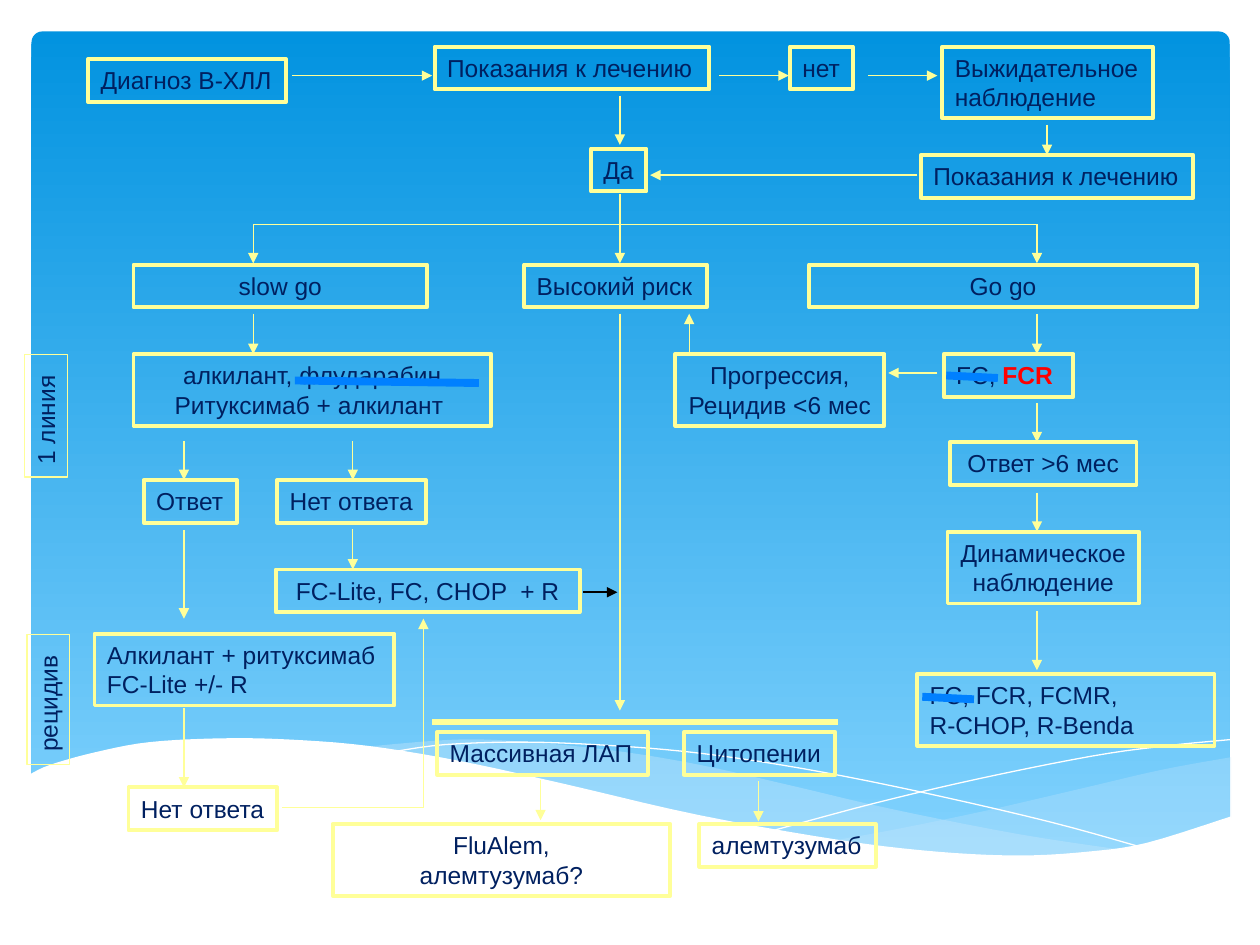
from lxml.etree import SubElement
from pptx import Presentation
from pptx.dml.color import RGBColor
from pptx.enum.shapes import MSO_CONNECTOR, MSO_SHAPE
from pptx.enum.text import MSO_AUTO_SIZE, PP_ALIGN
from pptx.oxml.ns import qn
from pptx.util import Inches, Pt

FONT, NAVY, YELLOW, WHITE = "Arial", "002060", "FFFF99", "FFFFFF"
RED, BLUE, BLACK, TINT = "FF0000", "0080FF", "000000", "C6E7FC"
LEFT, CENTER = PP_ALIGN.LEFT, PP_ALIGN.CENTER
BOX_H, LINE_H = 0.34, 0.23
BRANCH_Y = 1.78
SLOW_X, RISK_X, GO_X = 2.01, 4.92, 8.23
ANSWER_X, NO_ANSWER_X = 1.46, 2.8

# Each wave: opacity in percent, then smooth edges joined by straight sides
WAVES = [
    (TINT, 29, [
        [(9.77, 6.01), (9.22, 6.11), (8.62, 6.25), (7.8, 6.44), (7.07, 6.59), (6.62, 6.67)],
        [(6.62, 6.67), (7.19, 6.74), (7.7, 6.79), (8.25, 6.79), (8.73, 6.76), (9.22, 6.67),
         (9.51, 6.59), (9.77, 6.49)]]),
    (TINT, 40, [
        [(8.94, 6.75), (8.08, 6.62), (7.07, 6.42), (6.3, 6.24), (5.55, 6.07), (4.89, 5.96),
         (4.2, 5.89), (3.62, 5.87), (2.87, 5.93)],
        [(2.87, 5.93), (3.63, 6.04), (4.5, 6.24), (5.3, 6.42), (6.02, 6.57), (6.81, 6.7),
         (7.49, 6.78), (8.08, 6.8), (8.59, 6.79), (8.94, 6.75)]]),
    (WHITE, 100, [
        [(9.77, 6.48), (9.1, 6.69), (8.63, 6.76), (8.09, 6.79), (7.44, 6.76), (6.68, 6.67),
         (5.55, 6.47), (4.47, 6.22), (3.65, 6.04), (2.92, 5.92), (2.3, 5.87), (1.77, 5.86),
         (1.19, 5.89), (0.76, 5.97), (0.4, 6.07), (0.23, 6.15)],
        [(0.23, 7.31), (9.77, 7.31)]]),
]
HAIRLINES = [
    [(3.1, 5.97), (3.53, 5.91), (4.17, 5.89), (4.89, 5.92), (5.57, 5.98), (6.37, 6.1),
     (7.28, 6.28), (8.32, 6.52), (9.08, 6.73)],
    [(6.14, 6.59), (6.96, 6.37), (7.77, 6.18), (8.67, 6), (9.25, 5.92), (9.76, 5.87)],
]

# Lines of text, left, top, width, alignment, wrap
BOXES = [
    (["Диагноз В-ХЛЛ"], 0.7, 0.47, 1.57, LEFT, False),
    (["Показания к лечению"], 3.45, 0.37, 2.18, LEFT, True),
    (["нет"], 6.27, 0.37, 0.5, LEFT, False),
    (["Выжидательное", "наблюдение"], 7.48, 0.37, 1.67, LEFT, False),
    (["Да"], 4.69, 1.18, 0.44, LEFT, False),
    (["Показания к лечению"], 7.31, 1.23, 2.16, LEFT, False),
    (["slow go"], 1.06, 2.1, 2.33, CENTER, True),
    (["Высокий риск"], 4.16, 2.1, 1.45, LEFT, False),
    (["Go go"], 6.42, 2.1, 3.08, CENTER, True),
    (["алкилант, флударабин", "Ритуксимаб + алкилант "], 1.06, 2.81, 2.84, CENTER, True),
    (["Прогрессия,", "Рецидив <6 мес"], 5.36, 2.81, 1.66, CENTER, False),
    (["FC, FCR"], 7.49, 2.81, 1.03, LEFT, False),
    (["Ответ >6 мес"], 7.54, 3.51, 1.48, CENTER, True),
    (["Ответ"], 1.14, 3.81, 0.74, LEFT, False),
    (["Нет ответа"], 2.2, 3.81, 1.18, LEFT, False),
    (["Динамическое", "наблюдение"], 7.52, 4.22, 1.52, CENTER, False),
    (["FC-Lite, FC, CHOP  + R"], 2.19, 4.52, 2.41, CENTER, True),
    (["Алкилант + ритуксимаб", "FC-Lite +/- R"], 0.75, 5.03, 2.38, LEFT, True),
    (["FC, FCR, FCMR,", "R-CHOP, R-Benda"], 7.28, 5.35, 2.36, LEFT, True),
    (["Массивная ЛАП"], 3.47, 5.81, 1.67, LEFT, False),
    (["Цитопении"], 5.43, 5.81, 1.2, LEFT, False),
    (["Нет ответа"], 1.02, 6.25, 1.18, LEFT, True),
    (["FluAlem,", "алемтузумаб?"], 2.64, 6.54, 2.68, CENTER, True),
    (["алемтузумаб"], 5.55, 6.54, 1.4, LEFT, False),
]
STAGES = [("1 линия", -0.12, 3.13, 0.97), ("рецидив", -0.13, 5.38, 1.03)]
EMPHASIS = {"FC, FCR": ("FC, ", "FCR")}

# Start x, start y, end x, end y
ARROWS = [
    (2.32, 0.6, 3.43, 0.6), (5.71, 0.6, 6.26, 0.6), (6.89, 0.6, 7.44, 0.6),
    (8.31, 0.99, 8.31, 1.23), (7.28, 1.39, 5.16, 1.39), (7.44, 2.96, 7.05, 2.96),
    (5.47, 2.81, 5.47, 2.49), (3.36, 6.41, 3.36, 4.91),
    (4.29, 6.19, 4.29, 6.51), (6.02, 6.2, 6.02, 6.52),
]
# Column x: vertical spans
DOWN_ARROWS = {
    SLOW_X: [(BRANCH_Y, 2.09), (2.49, 2.81)],
    RISK_X: [(0.76, 1.15), (BRANCH_Y, 2.09), (2.49, 5.64)],
    GO_X: [(BRANCH_Y, 2.09), (2.49, 2.81), (3.2, 3.51), (3.91, 4.22), (4.85, 5.32)],
    ANSWER_X: [(3.5, 3.81), (4.21, 4.91), (5.62, 6.25)],
    NO_ANSWER_X: [(3.5, 3.81), (4.2, 4.52)],
}
PLAIN_LINES = [(RISK_X, 1.54, RISK_X, BRANCH_Y), (SLOW_X, BRANCH_Y, GO_X, BRANCH_Y),
               (2.24, 6.41, 3.36, 6.41)]
STRIKES = [(7.51, 2.98, 7.92, 3), (7.32, 5.53, 7.73, 5.55), (2.34, 3.02, 3.8, 3.04)]


def rgb(color):
    return RGBColor.from_string(color)


def smooth(points, steps=5):
    """Catmull-Rom curve through the points."""
    if len(points) < 3:
        return points
    ends = [points[0], *points, points[-1]]
    curve = [points[0]]
    for a, b, c, d in zip(ends, ends[1:], ends[2:], ends[3:]):
        for i in range(1, steps + 1):
            t = i / steps
            curve.append(tuple(
                q + ((r - p) * t + (2 * p - 5 * q + 4 * r - u) * t**2
                     + (3 * q - p - 3 * r + u) * t**3) / 2
                for p, q, r, u in zip(a, b, c, d)))
    return curve


def add_outline(shapes, edges, close):
    points = [(Inches(x), Inches(y)) for edge in edges for x, y in smooth(edge)]
    builder = shapes.build_freeform(*points[0])
    builder.add_line_segments(points[1:], close=close)
    s = builder.convert_to_shape()
    s.shadow.inherit = False
    return s


def add_background(shapes):
    s = shapes.add_shape(MSO_SHAPE.ROUNDED_RECTANGLE, Inches(0.25), Inches(0.25),
                         Inches(9.51), Inches(6.6))
    s.adjustments[0] = 0.013
    s.shadow.inherit = False
    s.line.fill.background()
    s.fill.gradient()
    s.fill.gradient_angle = 270
    for stop, color in zip(s.fill.gradient_stops, ("0293E0", "83D3FE")):
        stop.color.rgb = rgb(color)
    *tints, foreground = WAVES
    for wave in tints:
        add_wave(shapes, *wave)
    for points in HAIRLINES:
        s = add_outline(shapes, [points], close=False)
        s.fill.background()
        s.line.color.rgb = rgb(WHITE)
        s.line.width = Pt(0)
    add_wave(shapes, *foreground)


def add_wave(shapes, color, opacity, edges):
    s = add_outline(shapes, edges, close=True)
    s.line.fill.background()
    s.fill.solid()
    s.fill.fore_color.rgb = rgb(color)
    if opacity < 100:
        clr = s.fill._xPr.find(".//" + qn("a:srgbClr"))
        SubElement(clr, qn("a:alpha"), val=str(opacity * 1000))


def add_box(shapes, lines, x, y, w, align=LEFT, wrap=False, border=2.25):
    h = BOX_H + LINE_H * (len(lines) - 1)
    s = shapes.add_textbox(Inches(x), Inches(y), Inches(w), Inches(h))
    s.line.color.rgb = rgb(YELLOW)
    s.line.width = Pt(border)
    tf = s.text_frame
    tf.word_wrap = wrap
    tf.auto_size = MSO_AUTO_SIZE.SHAPE_TO_FIT_TEXT
    for i, line in enumerate(lines):
        p = tf.paragraphs[0] if i == 0 else tf.add_paragraph()
        p.alignment = align
        for j, text in enumerate(EMPHASIS.get(line, (line,))):
            r = p.add_run()
            r.text = text
            r.font.name, r.font.size = FONT, Pt(14)
            r.font.color.rgb = rgb(RED if j else NAVY)
            if j:
                r.font.bold = True
    return s


def add_line(shapes, x1, y1, x2, y2, color=YELLOW, width=0.75, arrow=False):
    c = shapes.add_connector(MSO_CONNECTOR.STRAIGHT, Inches(x1), Inches(y1),
                             Inches(x2), Inches(y2))
    c.line.color.rgb = rgb(color)
    c.line.width = Pt(width)
    if arrow:
        SubElement(c.line._get_or_add_ln(), qn("a:tailEnd"), type="triangle")
    SubElement(c._element.spPr, qn("a:effectLst"))


def main():
    prs = Presentation()
    prs.slide_width, prs.slide_height = Inches(10), Inches(7.5)
    shapes = prs.slides.add_slide(prs.slide_layouts[6]).shapes
    add_background(shapes)
    for box in BOXES:
        add_box(shapes, *box)
    for text, x, y, w in STAGES:
        add_box(shapes, [text], x, y, w, border=0.75).rotation = 270
    columns = [(x, top, x, bottom) for x, spans in DOWN_ARROWS.items() for top, bottom in spans]
    for ends in ARROWS + columns:
        add_line(shapes, *ends, arrow=True)
    for ends in PLAIN_LINES:
        add_line(shapes, *ends)
    add_line(shapes, 3.43, 5.73, 6.65, 5.73, width=3)
    for ends in STRIKES:
        add_line(shapes, *ends, color=BLUE, width=4.5)
    add_line(shapes, 4.63, 4.7, 4.9, 4.7, color=BLACK, width=1, arrow=True)
    prs.save("out.pptx")


if __name__ == "__main__":
    main()
